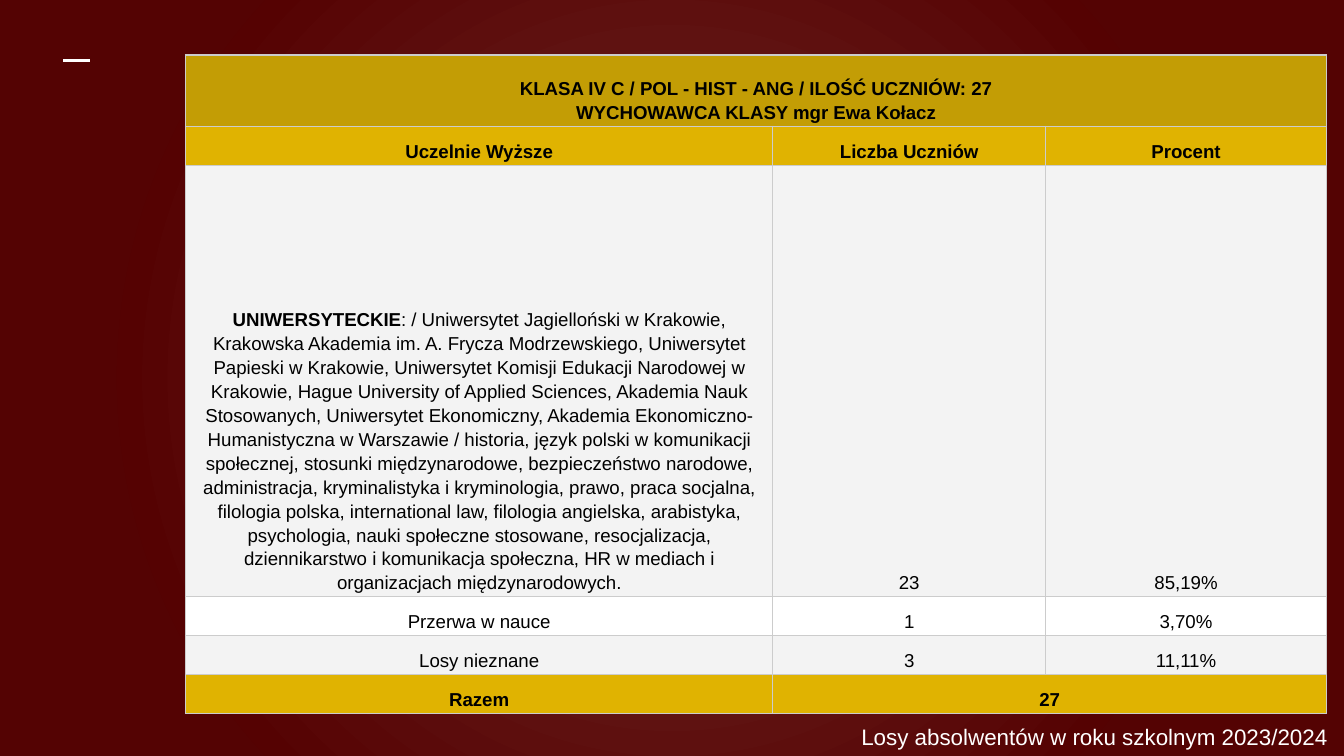
"""Build the slide on the graduates of class IV C."""
from lxml import etree
from pptx import Presentation
from pptx import util as u
from pptx.dml.color import RGBColor
from pptx.enum import shapes, text
from pptx.oxml import parse_xml
from pptx.oxml.ns import nsdecls, qn

WIDTH = 10
HEIGHT = WIDTH * 9 / 16
BACKGROUND = [(0, "702D2A"), (72, "550202"), (100, "540303")]
GOLD, DARK_GOLD, GREY, WHITE = "E0B301", "C39D05", "F3F3F3", "FFFFFF"
BLACK, BORDER = "000000", "CCCCCC"
FONT = "Arial"
FOOTER = "Losy absolwentów w roku szkolnym 2023/2024"
UNIVERSITIES = (
    ": / Uniwersytet Jagielloński w Krakowie, Krakowska Akademia im. A. Frycza "
    "Modrzewskiego, Uniwersytet Papieski w Krakowie, Uniwersytet Komisji Edukacji "
    "Narodowej w Krakowie, Hague University of Applied Sciences, Akademia Nauk "
    "Stosowanych, Uniwersytet Ekonomiczny, Akademia Ekonomiczno-Humanistyczna w "
    "Warszawie / historia, język polski w komunikacji społecznej, stosunki "
    "międzynarodowe, bezpieczeństwo narodowe, administracja, kryminalistyka i "
    "kryminologia, prawo, praca socjalna, filologia polska, international law, "
    "filologia angielska, arabistyka, psychologia, nauki społeczne stosowane, "
    "resocjalizacja, dziennikarstwo i komunikacja społeczna, HR w mediach i "
    "organizacjach międzynarodowych."
)
TABLE_LEFT, TABLE_TOP = 1.38, 0.41
COLUMNS = [4.37, 2.03, 2.09]
LOW = 0.29
ROWS = [
    (0.53, DARK_GOLD, True, ["KLASA IV C / POL - HIST - ANG / ILOŚĆ UCZNIÓW: 27\n"
                             "WYCHOWAWCA KLASY mgr Ewa Kołacz"]),
    (LOW, GOLD, True, ["Uczelnie Wyższe", "Liczba Uczniów", "Procent"]),
    (3.21, GREY, False, [[("UNIWERSYTECKIE", True), (UNIVERSITIES, False)], "23", "85,19%"]),
    (LOW, WHITE, False, ["Przerwa w nauce", "1", "3,70%"]),
    (LOW, GREY, False, ["Losy nieznane", "3", "11,11%"]),
    (LOW, GOLD, True, ["Razem", "27"]),
]


def rgb(value):
    return RGBColor.from_string(value)


def add_run(p, words, size, color, bold=False):
    r = p.add_run()
    r.text = words
    r.font.name, r.font.size, r.font.bold = FONT, u.Pt(size), bold
    r.font.color.rgb = rgb(color)


def set_background(s):
    stops = "".join(f'<a:gs pos="{pos * 1000}"><a:srgbClr val="{color}"/></a:gs>'
                    for pos, color in BACKGROUND)
    s.element.cSld.insert(0, parse_xml(
        f'<p:bg {nsdecls("p", "a")}><p:bgPr><a:gradFill rotWithShape="1">'
        f'<a:gsLst>{stops}</a:gsLst><a:path path="circle"><a:fillToRect l="50000" '
        't="50000" r="50000" b="50000"/></a:path></a:gradFill><a:effectLst/>'
        '</p:bgPr></p:bg>'))


def style_cell(cell, fill):
    tc_pr = cell._tc.get_or_add_tcPr()
    for side in "LRTB":
        tc_pr.append(parse_xml(
            f'<a:ln{side} {nsdecls("a")} w="{u.Pt(0.75)}"><a:solidFill>'
            f'<a:srgbClr val="{BORDER}"/></a:solidFill></a:ln{side}>'))
    cell.fill.solid()
    cell.fill.fore_color.rgb = rgb(fill)
    cell.margin_left = cell.margin_right = u.Inches(0.03)
    cell.margin_top = cell.margin_bottom = u.Inches(0.02)
    cell.vertical_anchor = text.MSO_ANCHOR.BOTTOM


def fill_cell(cell, content, bold):
    if isinstance(content, str):
        lines = [[(line, bold)] for line in content.split("\n")]
    else:
        lines = [content]
    tf = cell.text_frame
    for i, runs in enumerate(lines):
        p = tf.add_paragraph() if i else tf.paragraphs[0]
        p.alignment, p.line_spacing = text.PP_ALIGN.CENTER, 1.15
        for words, strong in runs:
            add_run(p, words, 10, BLACK, strong)


def add_results(s):
    heights = [row[0] for row in ROWS]
    table = s.shapes.add_table(
        len(ROWS), len(COLUMNS), u.Inches(TABLE_LEFT), u.Inches(TABLE_TOP),
        u.Inches(sum(COLUMNS)), u.Inches(sum(heights))).table
    table.first_row = table.horz_banding = False
    for column, width in zip(table.columns, COLUMNS):
        column.width = u.Inches(width)
    for i, (height, fill, bold, contents) in enumerate(ROWS):
        table.rows[i].height = u.Inches(height)
        for j in range(len(COLUMNS)):
            style_cell(table.cell(i, j), fill)
        for j, content in enumerate(contents):
            fill_cell(table.cell(i, j), content, bold)
        if len(contents) < len(COLUMNS):
            table.cell(i, len(contents) - 1).merge(table.cell(i, len(COLUMNS) - 1))


def add_dash(s):
    y = u.Inches(0.45)
    dash = s.shapes.add_connector(
        shapes.MSO_CONNECTOR.STRAIGHT, u.Inches(0.47), y, u.Inches(0.67), y)
    dash.line.color.rgb, dash.line.width = rgb(WHITE), u.Pt(1.5)
    etree.SubElement(dash._element.spPr, qn("a:effectLst"))


def add_footer(s):
    left, top, height = 6.31, 5.28, 0.38
    sp = s.shapes.add_textbox(u.Inches(left), u.Inches(top),
                              u.Inches(WIDTH - left), u.Inches(height))
    tf = sp.text_frame
    tf.word_wrap = True
    tf.margin_left = tf.margin_right = tf.margin_top = tf.margin_bottom = u.Inches(0.1)
    add_run(tf.paragraphs[0], FOOTER, 12, WHITE)


def main():
    prs = Presentation()
    prs.slide_width, prs.slide_height = u.Inches(WIDTH), u.Inches(HEIGHT)
    s = prs.slides.add_slide(prs.slide_layouts[6])
    set_background(s)
    add_dash(s)
    add_results(s)
    add_footer(s)
    prs.save("out.pptx")


if __name__ == "__main__":
    main()
